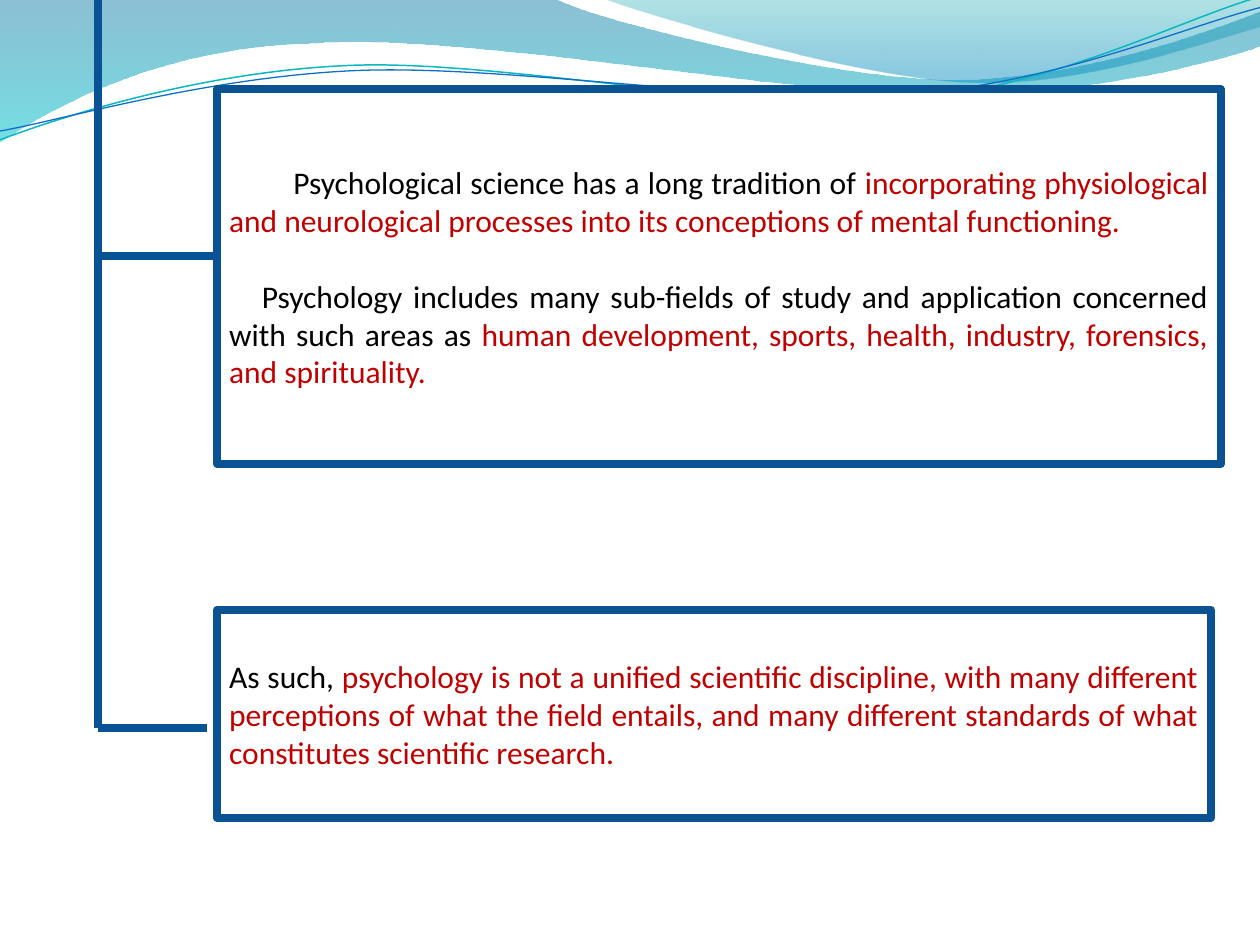
import math

from lxml import etree
from pptx import Presentation
from pptx.dml.color import RGBColor
from pptx.enum import shapes, text
from pptx.oxml import ns
from pptx.util import Inches, Pt

BLACK, RED, WHITE = "000000", "C00000", "FFFFFF"
BOX_LINE, CONNECTOR_LINE = "0B5292", "095295"
LINE_WIDTH = 4.5
WAVE_TILT = -2.7

# A wave is a frame (left, top, width, height) and a list of points on the slide:
# two numbers make a line, six a cubic curve.
# Gradient stops are (position, colour, opacity in percent), top to bottom.
FILLED_WAVES = [
    ((-0.01, -0.01, 10.02, 1.14),
     [(0, 0), (4.4, -0.01), (4.76, 0.17, 6.64, 0.63, 7.58, 0.63),
      (8.53, 0.63, 9.58, 0.26, 10, 0.09), (10.01, 0.36),
      (9.83, 0.44, 8.7, 0.76, 7.46, 0.75), (6.22, 0.75, 3.82, 0.28, 2.57, 0.34),
      (1.29, 0.36, 0.46, 0.83, -0.01, 1.13), (0, 0)],
     [(0, "0074A1", 45), (1, "00C6CF", 55)]),
    ((4.79, -0.01, 5.21, 0.7),
     [(4.79, -0.01), (5.09, 0.11, 6.82, 0.62, 7.69, 0.65),
      (8.56, 0.69, 9.61, 0.32, 10, 0.21), (10, 0), (4.79, -0.01)],
     [(0, "00A1A9", 30), (0.8, "008BBF", 45)]),
]
LINE_WAVES = [
    ((-0.02, 0.22, 10.02, 0.71),
     [(0, 1.11), (0.48, 0.93, 1.58, 0.57, 2.77, 0.52),
      (3.95, 0.47, 5.93, 0.89, 7.13, 0.8), (8.33, 0.71, 9.38, 0.15, 9.98, -0.02)],
     "0AB8BF", 0.85),
    ((-0.02, 0.3, 10.03, 0.58),
     [(0, 1.04), (0.47, 0.96, 1.64, 0.61, 2.83, 0.56),
      (4.03, 0.51, 5.97, 0.84, 7.17, 0.75), (8.36, 0.67, 9.41, 0.21, 10, 0.06)],
     "0F6FC6", 0.75),
]

# Each box: left, top, width, height, then paragraphs of
# (first-line indent, space before, black words, red words).
BOXES = [
    (1.72, 0.71, 7.97, 2.97, [
        (0.51, 0, "Psychological science has a long tradition of ",
         "incorporating physiological and neurological processes into its "
         "conceptions of mental functioning."),
        (0.26, 22, "Psychology includes many sub-fields of study and application "
         "concerned with such areas as ",
         "human development, sports, health, industry, forensics, and spirituality."),
    ]),
    (1.72, 4.84, 7.89, 1.65, [
        (0, 0, "As such, ",
         "psychology is not a unified scientific discipline, with many different "
         "perceptions of what the field entails, and many different standards of "
         "what constitutes scientific research."),
    ]),
]

TRUNK_X, TRUNK_BOTTOM = 0.78, 5.78
CONNECTORS = [
    (TRUNK_X, 0, TRUNK_X, TRUNK_BOTTOM),
    (TRUNK_X, 2.03, 1.72, 2.03),
    (TRUNK_X, TRUNK_BOTTOM, 1.64, TRUNK_BOTTOM),
]


def rgb(value):
    return RGBColor.from_string(value)


def set_line(shape, color, width):
    shape.line.color.rgb = rgb(color)
    shape.line.width = Pt(width)


def add_wave(slide, frame, wave, tilt=0, close=False):
    """Add a curved outline; its points show where it lies once tilted."""
    left, top, width, height = frame
    sine, cosine = math.sin(math.radians(-tilt)), math.cos(math.radians(tilt))

    def to_frame(x, y):
        x, y = x - left - width / 2, y - top - height / 2
        return (Inches(x * cosine - y * sine + width / 2),
                Inches(x * sine + y * cosine + height / 2))

    builder = slide.shapes.build_freeform(*to_frame(*wave[0]))
    builder.add_line_segments([to_frame(*segment[-2:]) for segment in wave[1:]],
                              close=close)
    shape = builder.convert_to_shape()
    shape.left, shape.top, shape.width, shape.height = map(Inches, frame)
    shape.rotation = tilt
    shape.shadow.inherit = False

    outline = next(shape._element.iter(ns.qn("a:path")))
    outline.set("w", str(shape.width))
    outline.set("h", str(shape.height))
    for step, segment in zip(list(outline), wave):
        step.clear()
        if len(segment) == 6:
            step_curve = etree.Element(ns.qn("a:cubicBezTo"))
            outline.replace(step, step_curve)
            step = step_curve
        for x, y in zip(segment[::2], segment[1::2]):
            x, y = to_frame(x, y)
            etree.SubElement(step, ns.qn("a:pt"), x=str(x), y=str(y))
    return shape


def set_gradient(shape, stops):
    shape.fill.gradient()
    shape.fill.gradient_angle = 270
    for stop, (position, color, opacity) in zip(shape.fill.gradient_stops, stops):
        stop.position = position
        stop.color.rgb = rgb(color)
    colors = list(shape._element.spPr.iter(ns.qn("a:srgbClr")))
    for element, (position, color, opacity) in zip(colors, stops):
        etree.SubElement(element, ns.qn("a:alpha"), val=str(opacity * 1000))


def add_box(slide, left, top, width, height, paragraphs):
    box = slide.shapes.add_shape(shapes.MSO_SHAPE.RECTANGLE, Inches(left),
                                 Inches(top), Inches(width), Inches(height))
    box.shadow.inherit = False
    box.fill.solid()
    box.fill.fore_color.rgb = rgb(WHITE)
    set_line(box, BOX_LINE, LINE_WIDTH)
    frame = box.text_frame
    frame.word_wrap = True
    frame.vertical_anchor = text.MSO_ANCHOR.MIDDLE
    for index, (indent, space, black_words, red_words) in enumerate(paragraphs):
        paragraph = frame.add_paragraph() if index else frame.paragraphs[0]
        paragraph.alignment = text.PP_ALIGN.JUSTIFY
        paragraph.space_before = Pt(space)
        paragraph._p.get_or_add_pPr().set("indent", str(Inches(indent)))
        for words, color in ((black_words, BLACK), (red_words, RED)):
            run = paragraph.add_run()
            run.text = words
            run.font.name = "Calibri"
            run.font.size = Pt(18)
            run.font.color.rgb = rgb(color)


def add_connector(slide, *ends):
    connector = slide.shapes.add_connector(
        shapes.MSO_CONNECTOR.STRAIGHT, *(Inches(end) for end in ends))
    set_line(connector, CONNECTOR_LINE, LINE_WIDTH)
    etree.SubElement(connector._element.spPr, ns.qn("a:effectLst"))


def main():
    presentation = Presentation()
    presentation.slide_width, presentation.slide_height = Inches(10), Inches(7.5)
    slide = presentation.slides.add_slide(presentation.slide_layouts[6])
    for frame, wave, stops in FILLED_WAVES:
        shape = add_wave(slide, frame, wave, close=True)
        set_gradient(shape, stops)
        shape.line.fill.background()
    for frame, wave, color, width in LINE_WAVES:
        shape = add_wave(slide, frame, wave, tilt=WAVE_TILT)
        shape.fill.background()
        set_line(shape, color, width)
    for box in BOXES:
        add_box(slide, *box)
    for ends in CONNECTORS:
        add_connector(slide, *ends)
    presentation.save("out.pptx")


if __name__ == "__main__":
    main()
